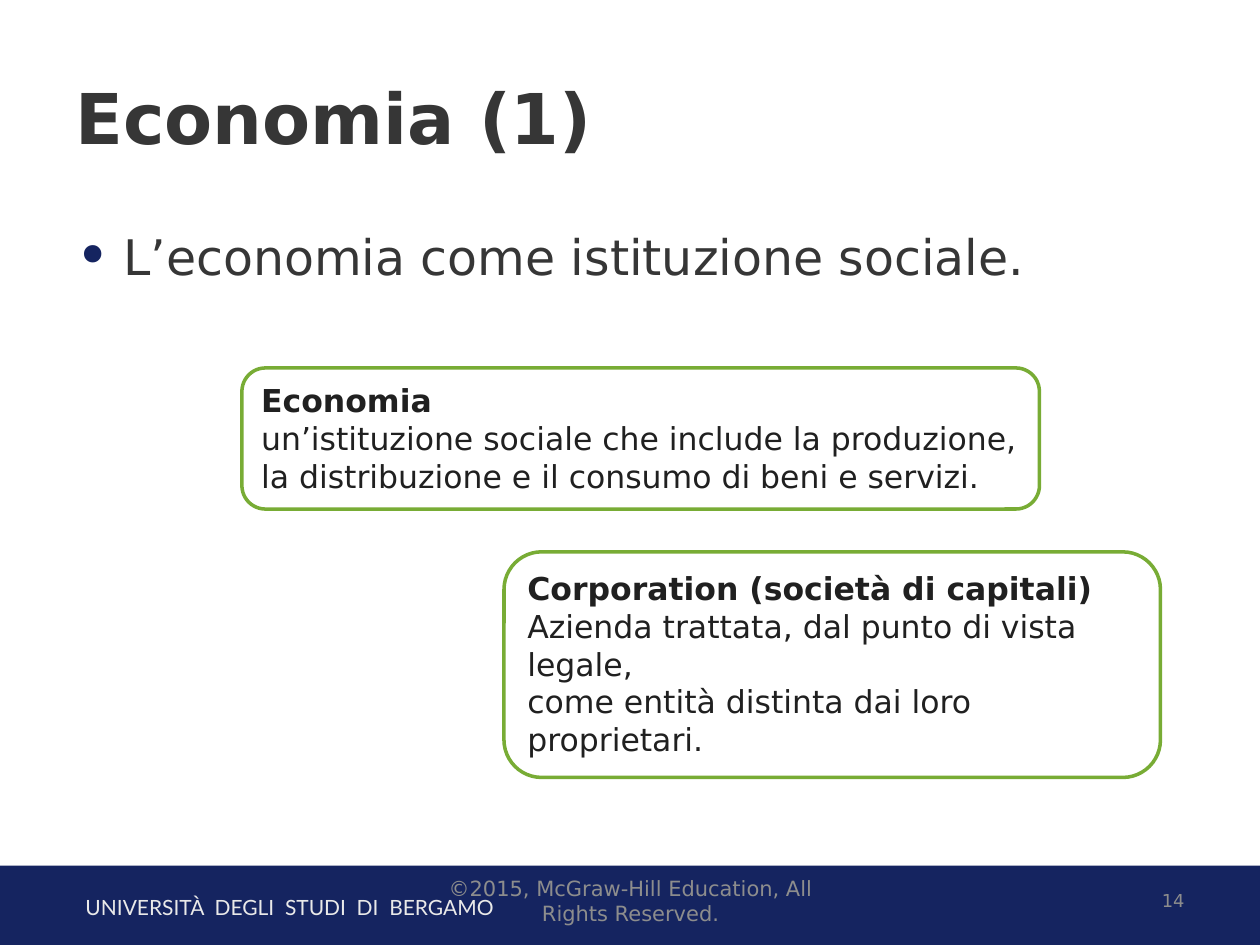
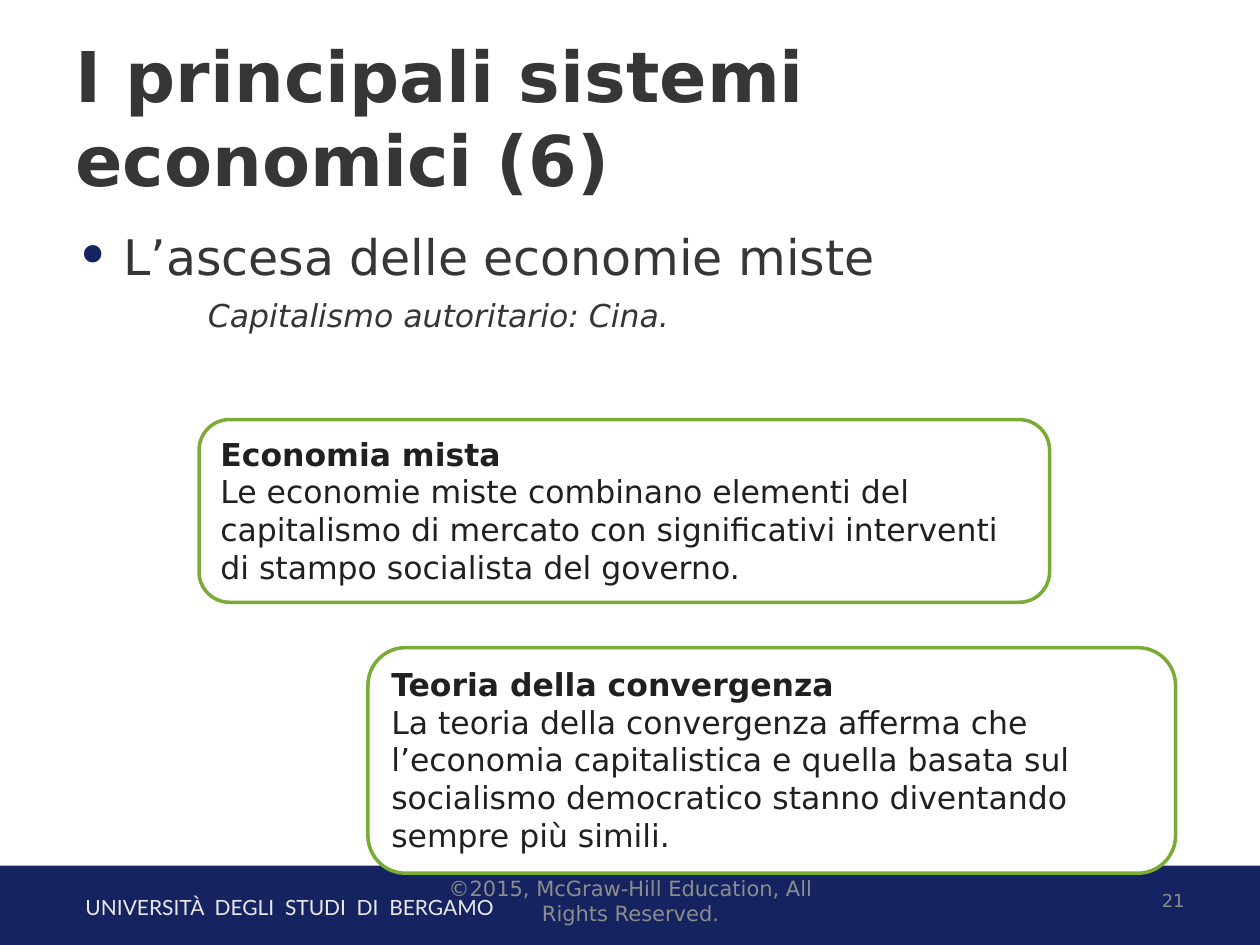
"""Build two lecture slides on economic systems with boxed definitions."""
from typing import NamedTuple

from lxml import etree
from pptx import Presentation
from pptx.dml.color import RGBColor
from pptx.enum.shapes import MSO_SHAPE
from pptx.enum.text import MSO_ANCHOR, MSO_AUTO_SIZE, PP_ALIGN
from pptx.oxml.ns import qn
from pptx.util import Inches, Pt

RECT, ROUND = MSO_SHAPE.RECTANGLE, MSO_SHAPE.ROUNDED_RECTANGLE
TOP, MIDDLE = MSO_ANCHOR.TOP, MSO_ANCHOR.MIDDLE
FIXED, GROW = MSO_AUTO_SIZE.NONE, MSO_AUTO_SIZE.SHAPE_TO_FIT_TEXT
LEFT, CENTER, RIGHT = PP_ALIGN.LEFT, PP_ALIGN.CENTER, PP_ALIGN.RIGHT
JUSTIFY = PP_ALIGN.JUSTIFY

COLORS = {
    "navy": "152460",
    "green": "78AC35",
    "white": "FFFFFF",
    "pale": "E9E9E9",
    "head": "363636",
    "ink": "202020",
    "gray": "8D8D8D",
}
MAIN, BRAND = "DejaVu Sans", "Lato"
SCHOOL = "UNIVERSITÀ  DEGLI  STUDI  DI  BERGAMO"
RIGHTS = "©2015, McGraw-Hill Education, All Rights Reserved."


class Area(NamedTuple):
    """Position and size in inches."""
    left: float
    top: float
    width: float
    height: float


class Box(NamedTuple):
    """A term with its definition lines."""
    area: Area
    term: str
    lines: list[str]


class Page(NamedTuple):
    """The content of one slide."""
    title: str
    point: str
    note: str
    number: int
    boxes: list[Box]


BAND = Area(0, 6.87, 10, 0.63)
NAME = Area(0.58, 7.05, 5.82, 0.3)
TITLE = Area(0.5, 0.3, 9, 1.25)
BODY = Area(0.5, 1.75, 9, 4.95)
NUMBER = Area(7.17, 6.95, 2.33, 0.4)
FOOTER = Area(3.42, 6.95, 3.17, 0.4)

PAGES = [
    Page("Economia (1)", "L’economia come istituzione sociale.", "", 14, [
        Box(Area(1.92, 2.92, 6.33, 1.12), "Economia", [
            "un’istituzione sociale che include la produzione, "
            "la distribuzione e il consumo di beni e servizi."]),
        Box(Area(4, 4.38, 5.21, 1.79), "Corporation (società di capitali)", [
            "Azienda trattata, dal punto di vista legale,",
            "come entità distinta dai loro proprietari."]),
    ]),
    Page("I principali sistemi economici (6)", "L’ascesa delle economie miste",
         "Capitalismo autoritario: Cina.", 21, [
        Box(Area(1.58, 3.33, 6.75, 1.45), "Economia mista", [
            "Le economie miste combinano elementi del capitalismo di mercato "
            "con significativi interventi di stampo socialista del governo."]),
        Box(Area(2.92, 5.14, 6.41, 1.79), "Teoria della convergenza", [
            "La teoria della convergenza afferma che l’economia capitalistica "
            "e quella basata sul socialismo democratico stanno diventando "
            "sempre più simili."]),
    ]),
]


def rgb(key: str) -> RGBColor:
    """Return a named colour."""
    return RGBColor.from_string(COLORS[key])


def place(area: Area) -> list[int]:
    """Return the area as lengths."""
    return [Inches(side) for side in area]


def move(shape, area: Area) -> None:
    """Put a placeholder in the given area."""
    shape.left, shape.top, shape.width, shape.height = place(area)


def style(para, size: float, color: str, face: str = MAIN,
          bold: bool = False, align: PP_ALIGN = LEFT) -> None:
    """Format one whole paragraph."""
    para.alignment = align
    para.font.name, para.font.size = face, Pt(size)
    para.font.bold = bold
    para.font.color.rgb = rgb(color)


def indent(para, left: float, first: float) -> None:
    """Set the left margin and first-line indent."""
    props = para._p.get_or_add_pPr()
    props.set("marL", str(Inches(left)))
    props.set("indent", str(Inches(first)))


def bullet(para) -> None:
    """Give a paragraph a large navy dot."""
    props = para._p.get_or_add_pPr()
    tint = etree.SubElement(props, qn("a:buClr"))
    etree.SubElement(tint, qn("a:srgbClr"), val=COLORS["navy"])
    etree.SubElement(props, qn("a:buSzPct"), val="122000")
    etree.SubElement(props, qn("a:buFont"), typeface=MAIN)
    etree.SubElement(props, qn("a:buChar"), char="•")


def add_panel(slide, kind: MSO_SHAPE, area: Area, fill: str):
    """Add a filled shape without line or shadow."""
    shape = slide.shapes.add_shape(kind, *place(area))
    shape.shadow.inherit = False
    shape.fill.solid()
    shape.fill.fore_color.rgb = rgb(fill)
    shape.line.fill.background()
    return shape


def add_label(slide, area: Area, text: str, size: float, color: str,
              face: str = MAIN, align: PP_ALIGN = LEFT,
              anchor: MSO_ANCHOR = MIDDLE) -> None:
    """Add a wrapped one-paragraph text box."""
    frame = slide.shapes.add_textbox(*place(area)).text_frame
    frame.word_wrap, frame.vertical_anchor = True, anchor
    frame.text = text
    style(frame.paragraphs[0], size, color, face, align=align)


def add_box(slide, box: Box) -> None:
    """Add a rounded definition box."""
    shape = add_panel(slide, ROUND, box.area, "white")
    shape.line.color.rgb, shape.line.width = rgb("green"), Pt(2)
    frame = shape.text_frame
    frame.word_wrap, frame.vertical_anchor = True, TOP
    frame.auto_size = GROW
    frame.text = "\n".join([box.term, *box.lines])
    for index, para in enumerate(frame.paragraphs):
        style(para, 18, "ink", bold=index == 0)


def fill_title(shape, text: str) -> None:
    """Write the slide title."""
    move(shape, TITLE)
    frame = shape.text_frame
    frame.text = text
    frame.vertical_anchor, frame.auto_size = MIDDLE, FIXED
    style(frame.paragraphs[0], 40, "head", bold=True)


def fill_body(shape, page: Page) -> None:
    """Write the main point and its note."""
    move(shape, BODY)
    frame = shape.text_frame
    frame.text = page.point
    frame.auto_size = FIXED
    point = frame.paragraphs[0]
    indent(point, 0.38, -0.38)
    bullet(point)
    point.space_before = Pt(0)
    style(point, 28, "head")
    if page.note:
        note = frame.add_paragraph()
        note.text, note.level = page.note, 2
        indent(note, 1.05, 0)
        etree.SubElement(note._p.get_or_add_pPr(), qn("a:buNone"))
        note.space_before = note.space_after = Pt(6)
        style(note, 18, "head", align=JUSTIFY)
        note.font.italic = True


def add_page(deck, page: Page) -> None:
    """Add one complete slide."""
    slide = deck.slides.add_slide(deck.slide_layouts[1])
    add_panel(slide, RECT, BAND, "navy")
    add_label(slide, NAME, SCHOOL, 12, "pale", BRAND, anchor=TOP)
    fill_title(slide.shapes.title, page.title)
    fill_body(slide.placeholders[1], page)
    add_label(slide, NUMBER, str(page.number), 10.2, "gray", align=RIGHT)
    for box in page.boxes:
        add_box(slide, box)
    add_label(slide, FOOTER, RIGHTS, 12, "gray", align=CENTER)


def main() -> None:
    """Build and save the deck."""
    deck = Presentation()
    deck.slide_width, deck.slide_height = Inches(10), Inches(7.5)
    for page in PAGES:
        add_page(deck, page)
    deck.save("out.pptx")


if __name__ == "__main__":
    main()
